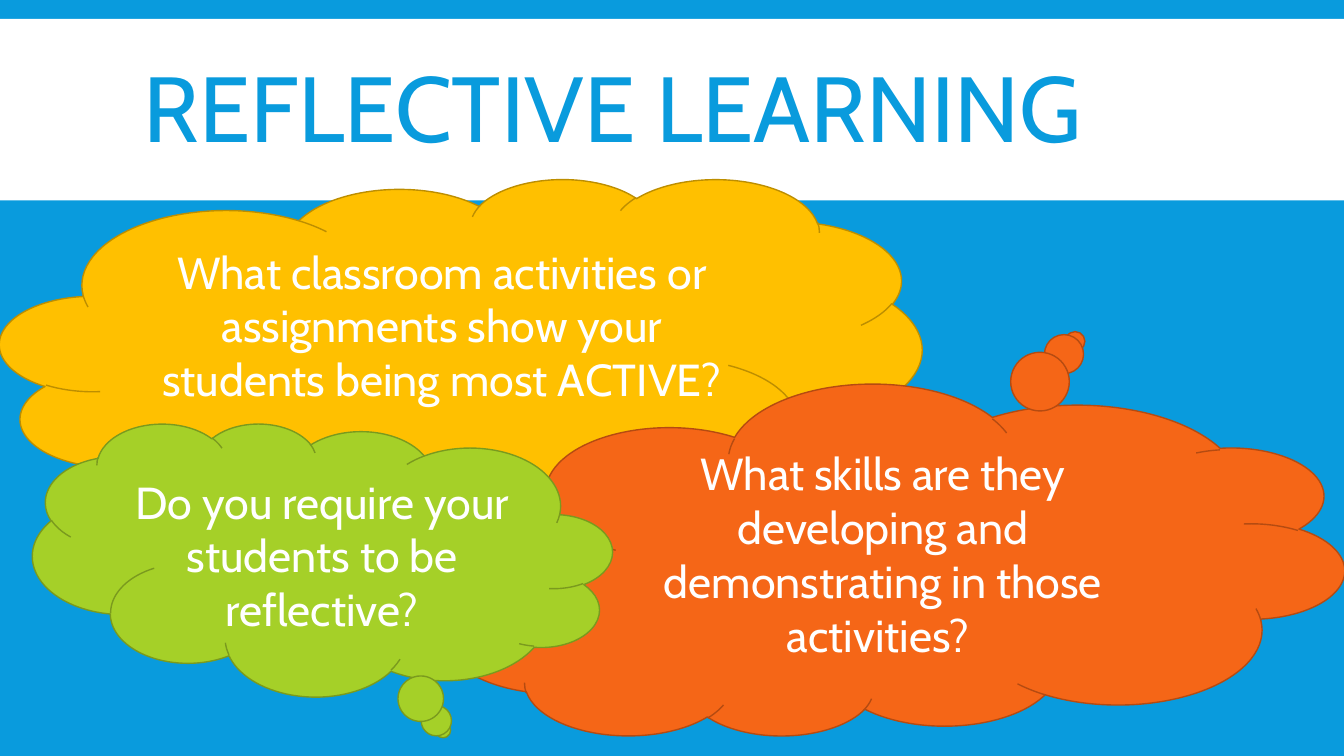
from pptx import Presentation
from pptx.dml.color import RGBColor
from pptx.enum.shapes import MSO_SHAPE
from pptx.enum.text import MSO_ANCHOR, MSO_AUTO_SIZE, PP_ALIGN
from pptx.oxml.ns import qn
from pptx.util import Emu, Pt

PX = 9525
BLUE = "099BDD"
WHITE = "FFFFFF"
FONT = "Cabin"


def px(*lengths):
    return [Emu(length * PX) for length in lengths]


def color(value):
    return RGBColor.from_string(value)


def write(frame, text, size, fill, align, anchor=MSO_ANCHOR.TOP,
          fit=MSO_AUTO_SIZE.NONE, spacing=None):
    frame.word_wrap = True
    frame.auto_size = fit
    frame.vertical_anchor = anchor
    paragraph = frame.paragraphs[0]
    paragraph.alignment = align
    paragraph.line_spacing = spacing
    run = paragraph.add_run()
    run.text = text
    run.font.size = Pt(size)
    run.font.name = FONT
    run.font.color.rgb = color(fill)


def title_band(slide, text, left, top, width, height):
    band = slide.shapes.add_shape(MSO_SHAPE.RECTANGLE, *px(left, top, width, height))
    band.shadow.inherit = False
    band.fill.solid()
    band.fill.fore_color.rgb = color(WHITE)
    band.line.fill.background()
    heading = slide.shapes.title
    heading.element.addprevious(band.element)
    heading.left, heading.top, heading.width, heading.height = px(
        left + 127, top + 12, width - 253, height - 15)
    write(heading.text_frame, text, size=66, fill=BLUE, align=PP_ALIGN.LEFT,
          anchor=MSO_ANCHOR.MIDDLE, spacing=0.85)


def thought(slide, question, box, inset, fill, outline, rotation=0, mirrored=False):
    left, top, width, height = box
    dx, dy, text_width, text_height = inset
    group = slide.shapes.add_group_shape()
    cloud = group.shapes.add_shape(MSO_SHAPE.CLOUD_CALLOUT, *px(left, top, width, height))
    cloud.shadow.inherit = False
    cloud.fill.solid()
    cloud.fill.fore_color.rgb = color(fill)
    cloud.line.color.rgb = color(outline)
    cloud.line.width = Pt(1)
    cloud.rotation = rotation
    if mirrored:
        cloud.element.spPr.find(qn("a:xfrm")).set("flipH", "1")
    label = group.shapes.add_textbox(*px(left + dx, top + dy, text_width, text_height))
    write(label.text_frame, question, size=32, fill=WHITE, align=PP_ALIGN.CENTER,
          fit=MSO_AUTO_SIZE.SHAPE_TO_FIT_TEXT)


def main():
    deck = Presentation()
    deck.slide_width, deck.slide_height = px(1280, 720)
    slide = deck.slides.add_slide(deck.slide_layouts[5])
    slide.background.fill.solid()
    slide.background.fill.fore_color.rgb = color(BLUE)
    title_band(slide, "REFLECTIVE LEARNING", 0, 18, 1280, 173)
    thought(slide, "What classroom activities or assignments show your students being most ACTIVE?",
            (0, 170, 878, 335), (139, 58, 564, 217), "FFC000", "BD8E00")
    thought(slide, "What skills are they developing and demonstrating in those activities? ",
            (402, 367, 878, 335), (161, 53, 556, 268), "F56617", "B54B11", rotation=180)
    thought(slide, "Do you require your students to be reflective?",
            (31, 403, 552, 260), (74, 44, 404, 217), "A5D028", "7A9A1E", mirrored=True)
    deck.save("out.pptx")


if __name__ == "__main__":
    main()
